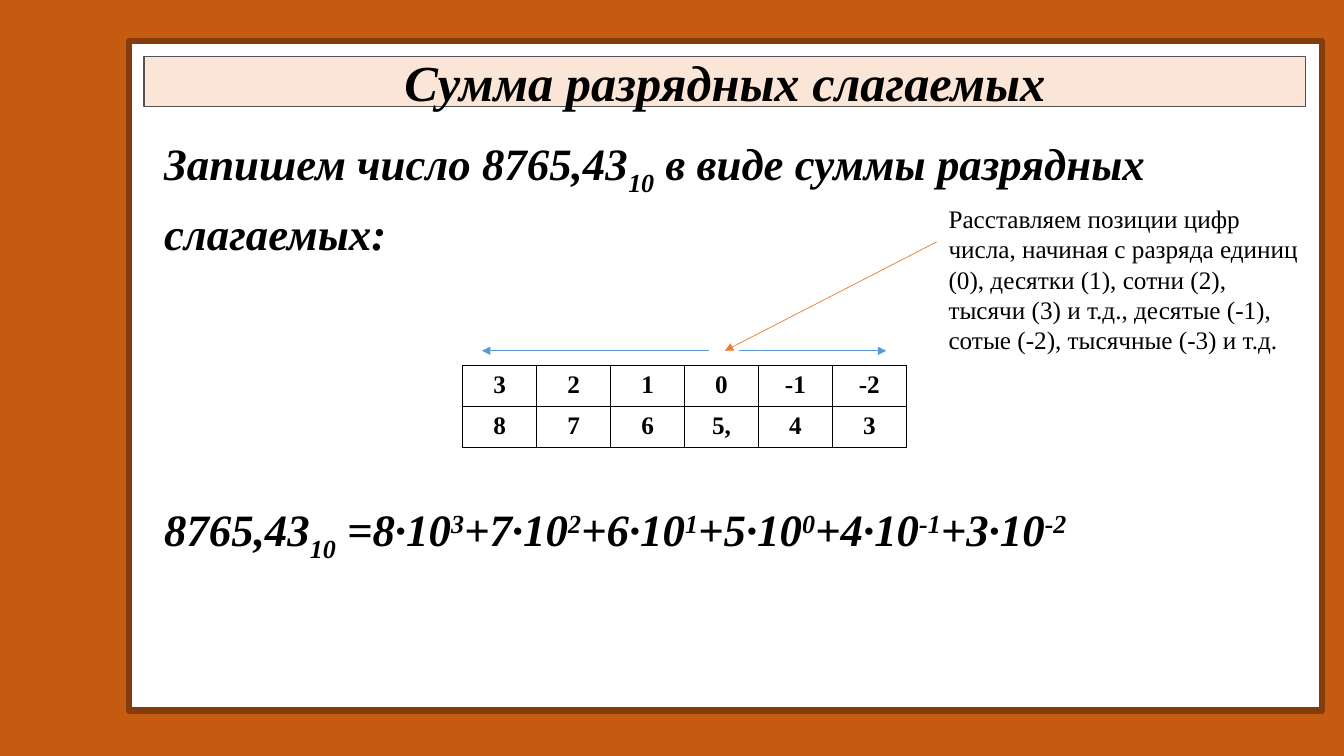
from dataclasses import dataclass

from lxml import etree
from pptx import Presentation
from pptx import util as u
from pptx.dml.color import RGBColor
from pptx.enum import shapes, text
from pptx.oxml import ns

PX = 9144  # EMU per px, 100 px to the inch
FONT = "Times New Roman"

BLACK = RGBColor(0x00, 0x00, 0x00)
WHITE = RGBColor(0xFF, 0xFF, 0xFF)
RUST = RGBColor(0xC5, 0x5A, 0x11)
BROWN = RGBColor(0x84, 0x3C, 0x0B)
PEACH = RGBColor(0xFB, 0xE5, 0xD6)
GREY = RGBColor(0x52, 0x52, 0x52)
ORANGE = RGBColor(0xED, 0x7D, 0x31)
BLUE = RGBColor(0x5B, 0x9B, 0xD5)

HEADING = {"size": u.Pt(36), "bold": True, "italic": True}
STATEMENT = {"size": u.Pt(32), "bold": True, "italic": True}
DIGIT = {"size": u.Pt(18), "bold": True}
NOTE = {"size": u.Pt(18)}

SUBSCRIPT, SUPERSCRIPT = -25000, 30000


@dataclass(frozen=True)
class Area:
    left: int
    top: int
    width: int
    height: int

    def emu(self) -> list[int]:
        return [v * PX for v in (self.left, self.top, self.width, self.height)]


@dataclass(frozen=True)
class Panel:
    area: Area
    fill: RGBColor
    line: RGBColor
    weight: float


@dataclass(frozen=True)
class Arrow:
    start: tuple[int, int]
    end: tuple[int, int]
    color: RGBColor


FRAME = Panel(Area(128, 41, 1183, 664), WHITE, BROWN, 4.5)
TITLE_BAR = Panel(Area(143, 56, 1152, 50), PEACH, GREY, 1)
BODY = Area(128, 121, 1150, 585)
POSITIONS = Area(459, 363, 440, 81)
HINT = Area(931, 197, 377, 162)

ARROWS = [
    Arrow((929, 240), (719, 348), ORANGE),
    Arrow((703, 348), (478, 348), BLUE),
    Arrow((733, 348), (879, 348), BLUE),
]

NUMBER = [("8765,43", 0), ("10", SUBSCRIPT)]
# Each coefficient of the expansion is paired with its power of ten
TERMS = [(" =8", "3"), ("+7", "2"), ("+6", "1"), ("+5", "0"), ("+4", "-1"), ("+3", "-2")]
DIGITS = [["3", "2", "1", "0", "-1", "-2"], ["8", "7", "6", "5,", "4", "3"]]


def add_span(para, words: str, style: dict, baseline: int = 0) -> None:
    span = para.add_run()
    span.text = words
    span.font.name = FONT
    span.font.color.rgb = BLACK
    for name, value in style.items():
        setattr(span.font, name, value)
    if baseline:
        span.font._element.set("baseline", str(baseline))


def add_panel(page, panel: Panel):
    box = page.shapes.add_shape(shapes.MSO_SHAPE.RECTANGLE, *panel.area.emu())
    box.shadow.inherit = False
    box.fill.solid()
    box.fill.fore_color.rgb = panel.fill
    box.line.color.rgb = panel.line
    box.line.width = u.Pt(panel.weight)
    return box


def add_text_frame(page, area: Area):
    frame = page.shapes.add_textbox(*area.emu()).text_frame
    frame.word_wrap = True
    return frame


def add_statement(para, spans: list[tuple[str, int]], space_before: int) -> None:
    para.line_spacing = 1.15
    para.space_before = u.Pt(space_before)
    properties = para._p.get_or_add_pPr()
    properties.set("marL", str(25 * PX))
    properties.set("indent", "0")
    for words, baseline in spans:
        add_span(para, words, STATEMENT, baseline)


def add_arrow(page, arrow: Arrow) -> None:
    points = [v * PX for v in (*arrow.start, *arrow.end)]
    line = page.shapes.add_connector(shapes.MSO_CONNECTOR.STRAIGHT, *points)
    line.line.color.rgb = arrow.color
    line.line.width = u.Pt(0.5)
    etree.SubElement(line.line._get_or_add_ln(), ns.qn("a:tailEnd"), type="triangle")
    etree.SubElement(line._element.spPr, ns.qn("a:effectLst"))


def add_borders(cell) -> None:
    properties = cell._tc.get_or_add_tcPr()
    for index, side in enumerate(("lnL", "lnR", "lnT", "lnB")):
        edge = etree.Element(ns.qn(f"a:{side}"), w=str(u.Pt(1)))
        fill = etree.SubElement(edge, ns.qn("a:solidFill"))
        etree.SubElement(fill, ns.qn("a:srgbClr"), val=str(BLACK))
        properties.insert(index, edge)


def add_positions(page) -> None:
    rows, columns = len(DIGITS), len(DIGITS[0])
    table = page.shapes.add_table(rows, columns, *POSITIONS.emu()).table
    table.first_row = table.horz_banding = False
    for row, digits in enumerate(DIGITS):
        for column, digit in enumerate(digits):
            cell = table.cell(row, column)
            cell.fill.background()
            add_borders(cell)
            para = cell.text_frame.paragraphs[0]
            para.alignment = text.PP_ALIGN.CENTER
            add_span(para, digit, DIGIT)


def main() -> None:
    deck = Presentation()
    deck.slide_width, deck.slide_height = 1333 * PX, 750 * PX
    page = deck.slides.add_slide(deck.slide_layouts[6])
    page.background.fill.solid()
    page.background.fill.fore_color.rgb = RUST
    add_panel(page, FRAME)

    # Task and its expansion
    body = add_text_frame(page, BODY)
    task = [("Запишем число ", 0), *NUMBER, (" в виде суммы разрядных слагаемых:", 0)]
    add_statement(body.paragraphs[0], task, 10)
    expansion = list(NUMBER)
    for coefficient, power in TERMS:
        expansion += [(f"{coefficient}·10", 0), (power, SUPERSCRIPT)]
    add_statement(body.add_paragraph(), expansion, 167)

    # Title
    title = add_panel(page, TITLE_BAR).text_frame
    title.word_wrap = True
    title.vertical_anchor = text.MSO_ANCHOR.MIDDLE
    title.paragraphs[0].alignment = text.PP_ALIGN.CENTER
    add_span(title.paragraphs[0], "Сумма разрядных слагаемых", HEADING)

    # Digit positions with the explanation
    add_positions(page)
    hint = add_text_frame(page, HINT)
    add_span(
        hint.paragraphs[0],
        "Расставляем позиции цифр числа, начиная с разряда единиц (0), десятки (1), "
        "сотни (2), тысячи (3) и т.д., десятые (-1), сотые (-2), тысячные (-3) и т.д.",
        NOTE,
    )
    for arrow in ARROWS:
        add_arrow(page, arrow)

    deck.save("out.pptx")


if __name__ == "__main__":
    main()
